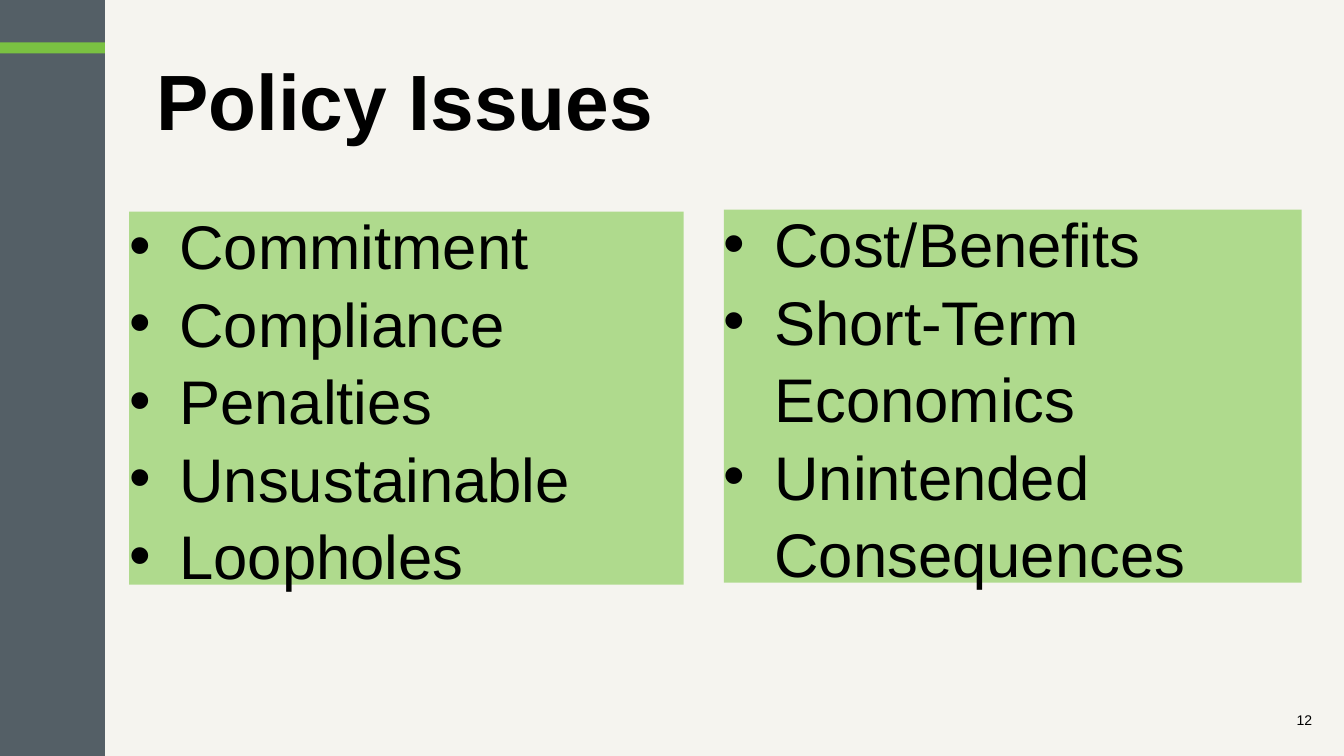
from dataclasses import dataclass

from lxml.etree import SubElement
from pptx import Presentation
from pptx.dml.color import RGBColor
from pptx.enum.shapes import MSO_SHAPE
from pptx.enum.text import MSO_ANCHOR, MSO_AUTO_SIZE, PP_ALIGN
from pptx.oxml.ns import qn
from pptx.util import Inches, Pt

# Content
TITLE = "Policy Issues"
PAGE = "12"
LISTS = [
    ["Commitment", "Compliance", "Penalties", "Unsustainable", "Loopholes"],
    ["Cost/Benefits", "Short-Term Economics", "Unintended Consequences"],
]

# Places: left, top, width, height
TITLE_BOX = (1.49, 0.42, 11.32, 1.25)
LIST_BOXES = [(1.28, 2.1, 5.5, 3.7), (7.18, 2.08, 5.73, 3.7)]
PAGE_BOX = (12.8, 7, 0.28, 0.28)
SIDEBAR_W = 1.04


@dataclass(frozen=True)
class Theme:
    font: str = "Arial"
    background: str = "F5F4EF"
    sidebar: str = "545F66"
    accent: str = "7AC142"
    panel: str = "AFDA8D"
    text: str = "000000"
    title_size: int = 56
    list_size: int = 44
    page_size: int = 10


THEME = Theme()


def paint(fill, color):
    fill.solid()
    fill.fore_color.rgb = RGBColor.from_string(color)


def place(sp, box):
    sp.left, sp.top, sp.width, sp.height = (Inches(v) for v in box)


def add_bar(slide, top, height, color):
    sp = slide.shapes.add_shape(MSO_SHAPE.RECTANGLE, 0, Inches(top),
                                Inches(SIDEBAR_W), Inches(height))
    paint(sp.fill, color)
    sp.line.fill.background()
    sp.shadow.inherit = False


def add_bullet(p, indent):
    pPr = p._p.get_or_add_pPr()
    pPr.set("marL", str(Inches(indent)))
    pPr.set("indent", str(-Inches(indent)))
    SubElement(pPr, qn("a:buFont")).set("typeface", THEME.font)
    SubElement(pPr, qn("a:buChar")).set("char", "•")


def write(sp, lines, size, bold=False, inset=0.06, spacing=1.0,
          anchor=MSO_ANCHOR.MIDDLE, wrap=True, indent=None):
    tf = sp.text_frame
    tf.word_wrap = wrap
    tf.auto_size = MSO_AUTO_SIZE.NONE
    tf.vertical_anchor = anchor
    tf.margin_left = tf.margin_right = Inches(inset)
    tf.margin_top = tf.margin_bottom = Inches(inset)
    for i, line in enumerate(lines):
        p = tf.paragraphs[0] if i == 0 else tf.add_paragraph()
        p.alignment = PP_ALIGN.LEFT
        p.line_spacing = spacing
        p.space_before = Pt(0)
        if indent:
            add_bullet(p, indent)
        r = p.add_run()
        r.text = line
        r.font.name = THEME.font
        r.font.size = Pt(size)
        r.font.bold = bold
        r.font.color.rgb = RGBColor.from_string(THEME.text)


def main():
    prs = Presentation()
    prs.slide_width, prs.slide_height = Inches(13.33), Inches(7.5)
    slide = prs.slides.add_slide(prs.slide_layouts.get_by_name("Two Content"))
    paint(slide.background.fill, THEME.background)

    # Sidebar with accent stripe
    add_bar(slide, 0, 7.5, THEME.sidebar)
    add_bar(slide, 0.42, 0.11, THEME.accent)

    # Title
    title = slide.shapes.title
    place(title, TITLE_BOX)
    write(title, [TITLE], THEME.title_size, bold=True, spacing=0.9)

    # Two bulleted panels
    for idx, (items, box) in enumerate(zip(LISTS, LIST_BOXES), start=1):
        body = slide.placeholders[idx]
        place(body, box)
        paint(body.fill, THEME.panel)
        write(body, items, THEME.list_size, inset=0, spacing=1.05, indent=0.5)

    # Page number
    page = slide.shapes.add_textbox(0, 0, 0, 0)
    place(page, PAGE_BOX)
    write(page, [PAGE], THEME.page_size, anchor=MSO_ANCHOR.TOP, wrap=False)

    prs.save("out.pptx")


if __name__ == "__main__":
    main()
